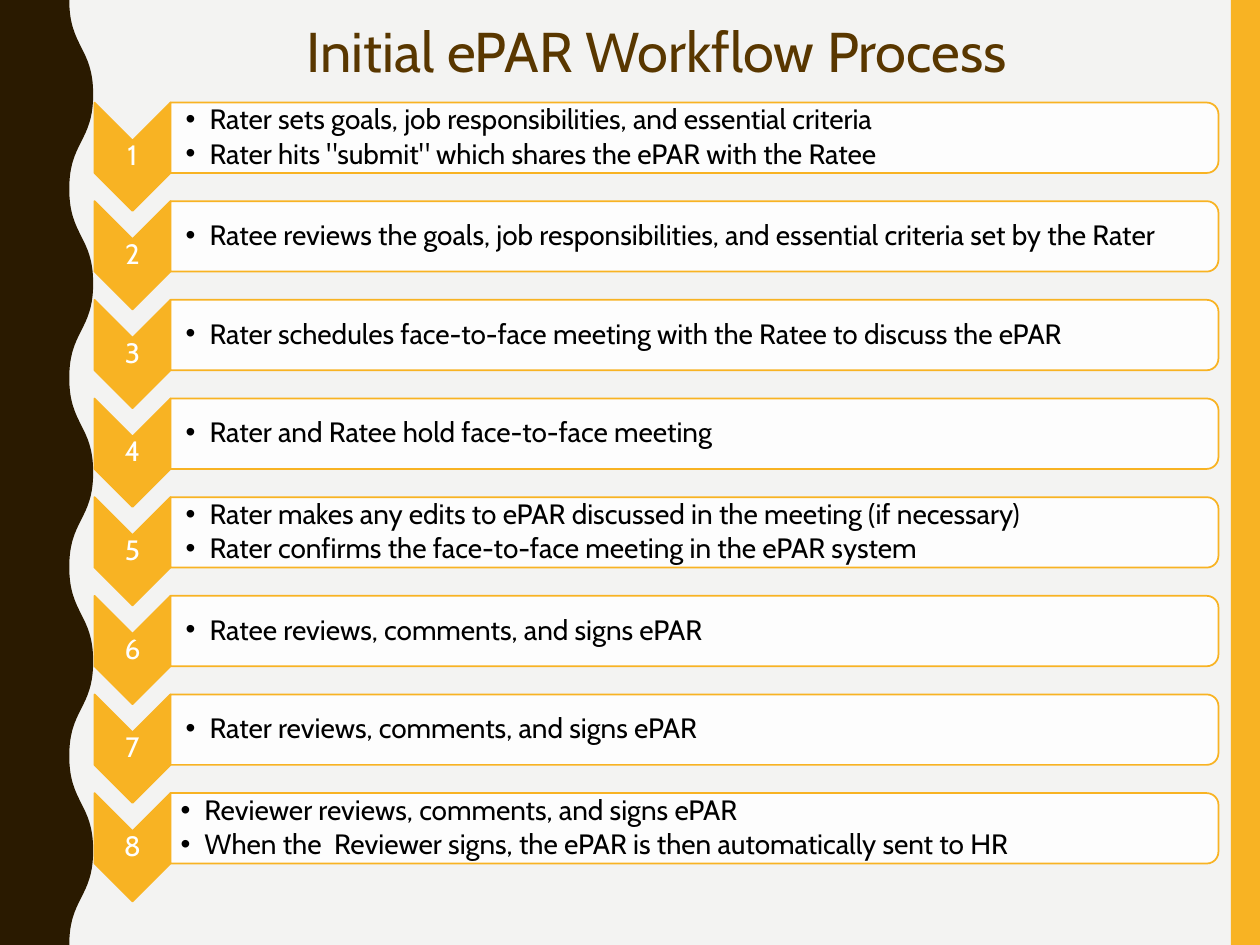
from lxml.etree import SubElement
from pptx import Presentation
from pptx.dml.color import RGBColor
from pptx.enum.shapes import MSO_SHAPE
from pptx.enum.text import MSO_ANCHOR, PP_ALIGN
from pptx.oxml.ns import qn
from pptx.util import Inches, Pt

COLORS = {
    "background": "F3F3F2",
    "gold": "F8B323",
    "wave": "2A1A00",
    "title": "593700",
    "panel": "FFFFFF",
    "number": "FFFFFF",
    "step": "000000",
}
FONT = "Cabin"
UNIT = Inches(10) // 100  # the slide is a grid of 100 columns by 75 rows
COLUMNS, ROWS = 100, 75

TITLE = "Initial ePAR Workflow Process"
STEPS = [
    ["Rater sets goals, job responsibilities, and essential criteria",
     'Rater hits "submit" which shares the ePAR with the Ratee'],
    ["Ratee reviews the goals, job responsibilities, and essential criteria set by the Rater"],
    ["Rater schedules face-to-face meeting with the Ratee to discuss the ePAR"],
    ["Rater and Ratee hold face-to-face meeting"],
    ["Rater makes any edits to ePAR discussed in the meeting (if necessary)",
     "Rater confirms the face-to-face meeting in the ePAR system"],
    ["Ratee reviews, comments, and signs ePAR"],
    ["Rater reviews, comments, and signs ePAR"],
    ["Reviewer reviews, comments, and signs ePAR",
     "When the  Reviewer signs, the ePAR is then automatically sent to HR"],
]


def grid(*values):
    return [round(value * UNIT) for value in values]


def color(name):
    return RGBColor.from_string(COLORS[name])


def set_attributes(target, values):
    for name, value in values.items():
        setattr(target, name, value)


def paint(shape, fill, outline=None):
    shape.shadow.inherit = False
    shape.fill.solid()
    shape.fill.fore_color.rgb = color(fill)
    if outline:
        shape.line.color.rgb = color(outline)
        shape.line.width = Pt(1)
    else:
        shape.line.fill.background()


def add_turned_shape(shapes, kind, box, fill):
    """Add a preset turned 90 degrees so that it covers the given box."""
    left, top, width, height = box
    shift = (width - height) / 2
    shape = shapes.add_shape(kind, *grid(left + shift, top - shift, height, width))
    shape.rotation = 90
    paint(shape, fill, "gold")
    return shape


def add_text(shapes, box, lines, font, paragraph_format=None, frame_format=None):
    frame = shapes.add_textbox(*grid(*box)).text_frame
    set_attributes(frame, {"word_wrap": True, **(frame_format or {})})
    for index, line in enumerate(lines):
        paragraph = frame.add_paragraph() if index else frame.paragraphs[0]
        set_attributes(paragraph, paragraph_format or {})
        run = paragraph.add_run()
        run.text = line
        size, color_name = font
        set_attributes(run.font, {"name": FONT, "size": Pt(size)})
        run.font.color.rgb = color(color_name)
    return frame


def add_bullets(frame, indent):
    for paragraph in frame.paragraphs:
        properties = paragraph._p.get_or_add_pPr()
        properties.set("marL", str(indent))
        properties.set("indent", str(-indent))
        SubElement(properties, qn("a:buFont")).set("typeface", "Arial")
        SubElement(properties, qn("a:buChar")).set("char", "•")


def bend_slanted_lines(shape):
    """Turn each slanted line of an outline into an S-shaped curve."""
    x, y = 0, 0
    for node in shape._element.iter(qn("a:moveTo"), qn("a:lnTo")):
        point = node[0]
        end_x, end_y = int(point.get("x")), int(point.get("y"))
        if node.tag == qn("a:lnTo") and x != end_x and y != end_y:
            middle = (y + end_y) // 2
            node.tag = qn("a:cubicBezTo")
            node.remove(point)
            for place in ((x, middle), (end_x, middle), (end_x, end_y)):
                control = SubElement(node, qn("a:pt"))
                control.set("x", str(place[0]))
                control.set("y", str(place[1]))
        x, y = end_x, end_y


def add_wave(shapes, box, trough, half_waves=10):
    """Draw a band whose right edge swings between trough and the box's edge."""
    left, top, width, height = box
    step = height / half_waves
    points = [grid(left + (width if index % 2 else trough), top + index * step)
              for index in range(half_waves + 1)]
    points.append(grid(left, top + height))
    builder = shapes.build_freeform(*grid(left, top))
    builder.add_line_segments(points, close=True)
    wave = builder.convert_to_shape()
    bend_slanted_lines(wave)
    paint(wave, "wave")


def add_frame(shapes):
    # Gold bar on the right, wavy band on the left
    bar = shapes.add_shape(
        MSO_SHAPE.RECTANGLE, *grid(97.7, 0, COLUMNS - 97.7, ROWS))
    paint(bar, "gold")
    add_wave(shapes, (0, 0, 7.4, ROWS), 5.5)


def add_step(shapes, box, number, lines, inset):
    left, top, width, height = box
    arrow_width, panel_height = 6.03, 0.65 * height
    panel_left, panel_width = left + arrow_width, width - arrow_width
    tight = dict.fromkeys(
        ("margin_left", "margin_top", "margin_right", "margin_bottom"), Inches(0.01))
    tight["vertical_anchor"] = MSO_ANCHOR.MIDDLE

    # Numbered arrow
    add_turned_shape(shapes, MSO_SHAPE.CHEVRON,
                     (left, top, arrow_width, height), "gold")
    add_text(shapes, (left, top + 3, arrow_width, 2.6), [str(number)],
             (16, "number"), {"alignment": PP_ALIGN.CENTER, "line_spacing": 0.9},
             tight)

    # Panel with its bullets
    panel = add_turned_shape(shapes, MSO_SHAPE.ROUND_2_SAME_RECTANGLE,
                             (panel_left, top, panel_width, panel_height), "panel")
    fill = panel._element.spPr.find(qn("a:solidFill"))
    SubElement(fill[0], qn("a:alpha")).set("val", "90000")
    frame = add_text(shapes, (panel_left, top + 0.25, panel_width - 0.2, panel_height - 0.5),
                     lines, (16, "step"),
                     {"level": 1, "line_spacing": 0.9, "space_after": Pt(2.4)},
                     {**tight, "margin_left": Inches(inset)})
    add_bullets(frame, Inches(0.19))


def add_steps(shapes, box, arrow_height=8.6):
    left, top, width, height = box
    pitch = (height - arrow_height) / (len(STEPS) - 1)
    group = shapes.add_group_shape()
    for index, lines in enumerate(STEPS):
        inset = 0.08 if index == len(STEPS) - 1 else 0.12
        add_step(group.shapes, (left, top + index * pitch, width, arrow_height),
                 index + 1, lines, inset)


def main():
    presentation = Presentation()
    set_attributes(presentation, {"slide_width": COLUMNS * UNIT,
                                  "slide_height": ROWS * UNIT})
    slide = presentation.slides.add_slide(presentation.slide_layouts[6])
    slide.background.fill.solid()
    slide.background.fill.fore_color.rgb = color("background")
    add_frame(slide.shapes)
    add_steps(slide.shapes, (7.5, 8.14, 89.2, 63.41))
    add_text(slide.shapes, (23.35, 0.8, 65.8, 6.4), [TITLE], (32, "title"))
    presentation.save("out.pptx")


if __name__ == "__main__":
    main()
